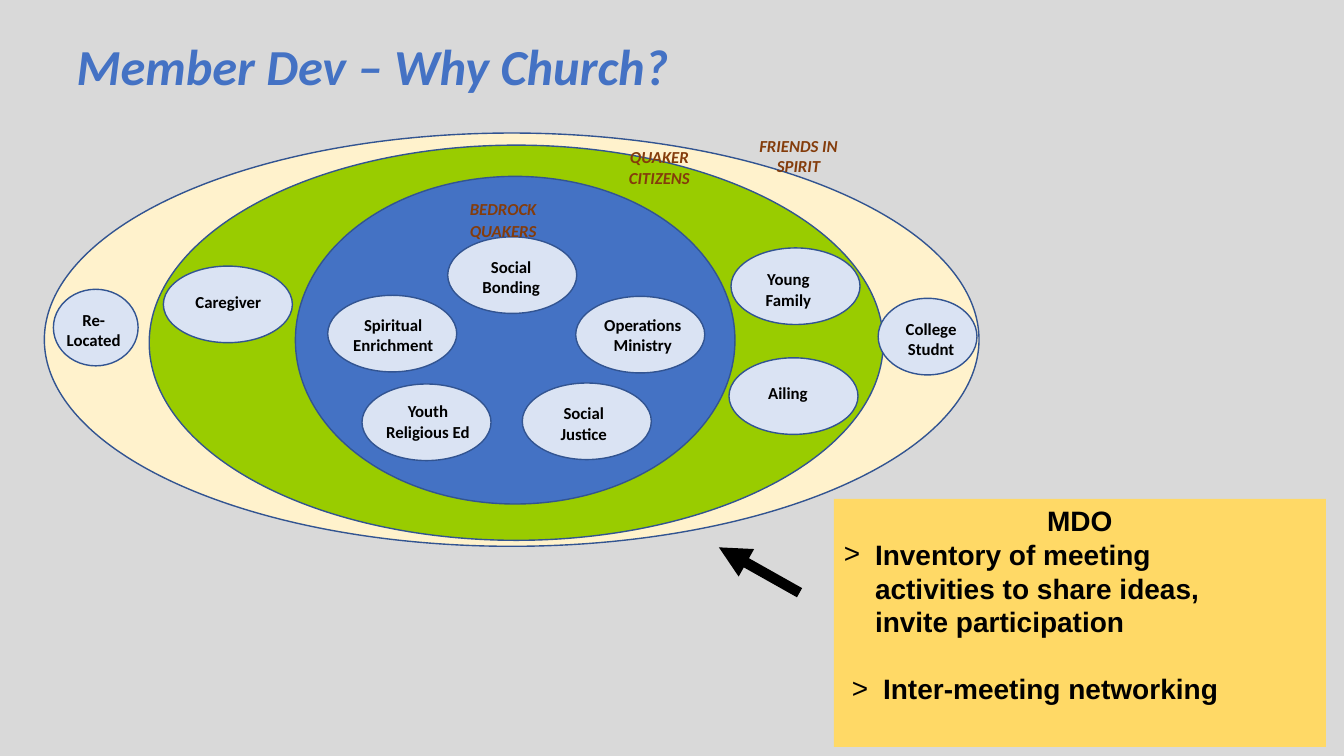
"""Build the slide on member development as nested rings of roles."""
from lxml import etree
from pptx import Presentation
from pptx.dml.color import RGBColor
from pptx.enum.shapes import MSO_CONNECTOR, MSO_SHAPE
from pptx.enum.text import MSO_ANCHOR, PP_ALIGN
from pptx.oxml.ns import qn
from pptx.util import Pt

OVAL, RECT = MSO_SHAPE.OVAL, MSO_SHAPE.RECTANGLE
LINE = MSO_CONNECTOR.STRAIGHT
LEFT, MID, TOP = PP_ALIGN.LEFT, PP_ALIGN.CENTER, MSO_ANCHOR.TOP
PX = 9144
NAVY, BLUE, PALE, RUST = "325491", "4472C4", "DAE3F3", "843C0B"
hue = RGBColor.from_string


def scale(*nums):
    return [num * PX for num in nums]


def write(para, text, size=12, font="Calibri", ink="000000", slant=False, align=MID):
    para.alignment = align
    for num, line in enumerate(text.split("\n")):
        if num:
            para.add_line_break()
        run = para.add_run()
        run.text = line
        run.font.size, run.font.name = Pt(size), font
        run.font.bold, run.font.italic = True, slant
        run.font.color.rgb = hue(ink)


deck = Presentation()
deck.slide_width, deck.slide_height = scale(1333, 750)
slide = deck.slides.add_slide(deck.slide_layouts[5])
slide.background.fill.solid()
slide.background.fill.fore_color.rgb = hue("D9D9D9")
shapes = slide.shapes

title = shapes.title
title.left, title.top, title.width, title.height = scale(66, 30, 1046, 71)
title.text_frame.vertical_anchor = TOP
write(title.text_frame.paragraphs[0], "Member Dev – Why Church?",
      size=36, ink=BLUE, slant=True, align=LEFT)

rings = [
    (44, 132, 927, 410, "FFF2CC"),
    (148, 144, 728, 392, "99CC00"),
    (293, 175, 436, 325, BLUE),
]
roles = [
    ("Spiritual Enrichment", 325, 293, 128, 339, 307, 102),
    ("Social Bonding", 444, 235, 128, 467, 250, 80),
    ("Operations Ministry", 571, 294, 128, 587, 307, 101),
    ("Social Justice", 518, 380, 128, 539, 395, 80),
    ("Youth Religious Ed", 359, 381, 128, 371, 393, 107),
    ("Young Family", 725, 246, 128, 742, 262, 80),
    ("Ailing", 723, 355, 128, 735, 375, 93),
    ("Caregiver", 162, 264, 128, 180, 284, 93),
    ("College Studnt", 871, 296, 98, 887, 311, 73),
    ("Re-Located", 53, 287, 84, 55, 302, 76),
]
nodes = [(x, y, w, 76, PALE) for _, x, y, w, *_ in roles]
for x, y, w, h, fill in rings + nodes:
    oval = shapes.add_shape(OVAL, *scale(x, y, w, h))
    oval.shadow.inherit = False
    oval.fill.solid()
    oval.fill.fore_color.rgb = hue(fill)
    oval.line.color.rgb = hue(NAVY)
    oval.line.width = Pt(1)

labels = [([(name, 12)], x, y, w, "000000", False)
          for name, _, _, _, x, y, w in roles]
labels += [
    ([("BEDROCK", 12), (" ", 20), ("QUAKERS", 12)], 440, 181, 118, RUST, True),
    ([("QUAKER CITIZENS", 12)], 595, 141, 118, RUST, True),
    ([("FRIENDS IN SPIRIT", 12)], 733, 130, 118, RUST, True),
]
for parts, x, y, w, ink, slant in labels:
    frame = shapes.add_textbox(*scale(x, y, w, 49)).text_frame
    frame.word_wrap = True
    for text, size in parts:
        write(frame.paragraphs[0], text, size=size, ink=ink, slant=slant)

panel = shapes.add_shape(RECT, *scale(827, 495, 488, 246))
panel.shadow.inherit = False
panel.fill.solid()
panel.fill.fore_color.rgb = hue("FFD966")
panel.line.fill.background()
frame = panel.text_frame
frame.vertical_anchor = TOP
write(frame.paragraphs[0], "MDO", size=20, font="Arial")
goals = [
    ("Inventory of meeting\nactivities to share ideas,\ninvite participation", 31, 0),
    ("Inter-meeting networking", 39, 24),
]
for text, inset, gap in goals:
    para = frame.add_paragraph()
    write(para, text, size=20, font="Arial", align=LEFT)
    para.space_before = Pt(gap)
    props = para._p.get_or_add_pPr()
    props.set("marL", str(inset * PX))
    props.set("indent", str(-31 * PX))
    etree.SubElement(props, qn("a:buFont")).set("typeface", "Arial")
    etree.SubElement(props, qn("a:buChar")).set("char", ">")

arrow = shapes.add_connector(LINE, *scale(793, 588, 713, 543))
arrow.line.color.rgb = hue("000000")
arrow.line.width = Pt(7.5)
etree.SubElement(arrow.line._get_or_add_ln(), qn("a:tailEnd")).set("type", "triangle")
etree.SubElement(arrow._element.spPr, qn("a:effectLst"))

deck.save("out.pptx")
